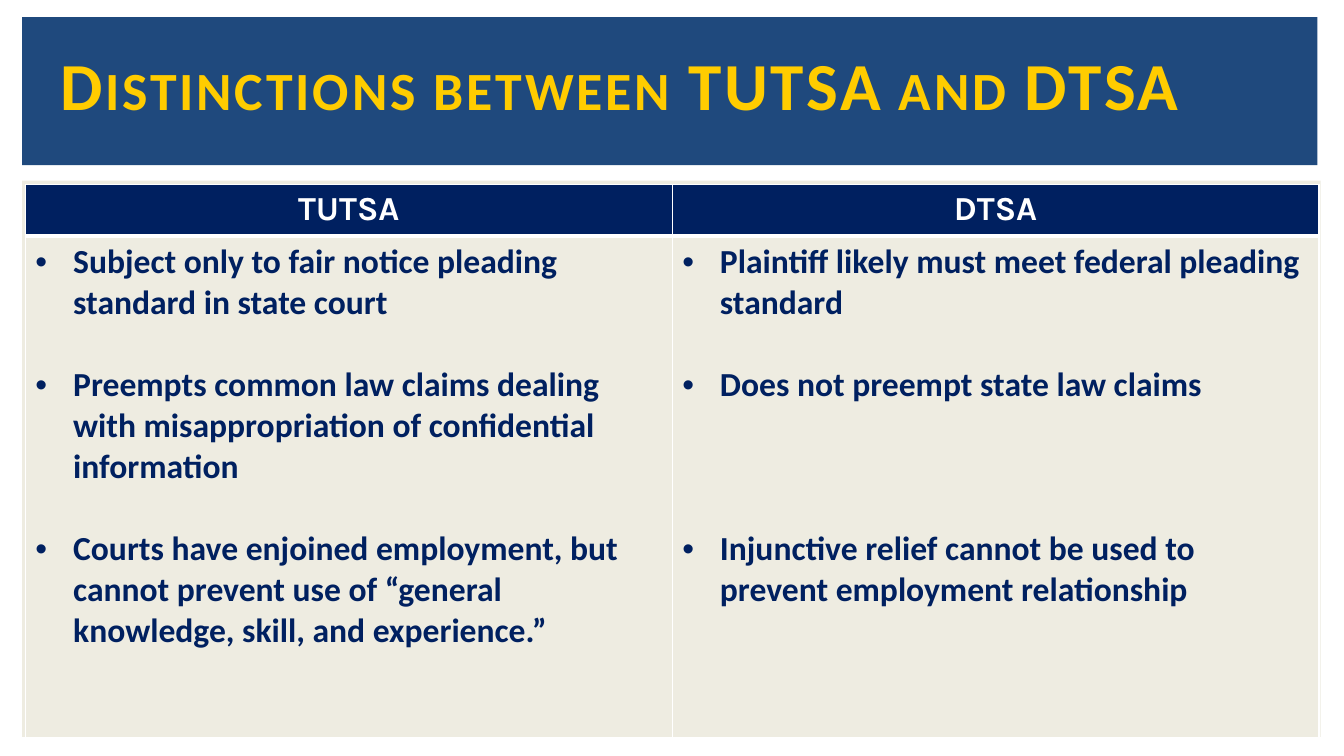
from dataclasses import dataclass

from lxml import etree
from pptx import Presentation
from pptx.dml.color import RGBColor
from pptx.enum.shapes import MSO_SHAPE
from pptx.enum.text import MSO_ANCHOR, MSO_AUTO_SIZE, PP_ALIGN
from pptx.oxml.ns import qn
from pptx.util import Cm, Pt

RECT = MSO_SHAPE.RECTANGLE
MIDDLE = MSO_ANCHOR.MIDDLE
FIXED = MSO_AUTO_SIZE.NONE
CENTER = PP_ALIGN.CENTER


@dataclass(frozen=True)
class Theme:
    navy: str = "002060"
    blue: str = "1F497D"
    gold: str = "FFCC00"
    cream: str = "EEECE1"
    white: str = "FFFFFF"
    main: str = "Calibri"
    head: str = "Karla"
    big: int = 48
    text: int = 24
    line: float = 29.3  # height of one line of body text, in points


class Deck:
    def __init__(self, theme):
        self.theme = theme
        self.file = Presentation()
        self.file.slide_width, self.file.slide_height = Cm(33.87), Cm(19.05)
        self.slide = self.file.slides.add_slide(self.file.slide_layouts[5])

    def style(self, para, font, size, color):
        for run in para.runs:
            run.font.name, run.font.size, run.font.bold = font, Pt(size), True
            run.font.color.rgb = RGBColor.from_string(color)

    def panel(self, box, color):
        shape = self.slide.shapes.add_shape(RECT, *map(Cm, box))
        shape.shadow.inherit = False
        shape.fill.solid()
        shape.fill.fore_color.rgb = RGBColor.from_string(color)
        shape.line.fill.background()

    def title(self, box, text):
        title = self.slide.shapes.title
        title.left, title.top, title.width, title.height = map(Cm, box)
        frame = title.text_frame
        frame.text = text
        frame.word_wrap, frame.auto_size = True, FIXED
        frame.vertical_anchor = MIDDLE
        para = frame.paragraphs[0]
        para.alignment = CENTER
        self.style(para, self.theme.main, self.theme.big, self.theme.gold)
        props = para.runs[0].font._element
        props.set("cap", "small")
        props.set("spc", "200")
        # Bring the title in front of the panels
        self.slide.shapes._spTree.append(title._element)

    def cell(self, cell, color, top, base):
        cell.fill.solid()
        cell.fill.fore_color.rgb = RGBColor.from_string(color)
        props = cell._tc.get_or_add_tcPr()
        sides = (("lnL", 1), ("lnR", 1), ("lnT", top), ("lnB", base))
        for place, (side, width) in enumerate(sides):
            line = etree.Element(qn(f"a:{side}"), w=str(Pt(width)))
            fill = etree.SubElement(line, qn("a:solidFill"))
            etree.SubElement(fill, qn("a:srgbClr"), val=self.theme.white)
            props.insert(place, line)

    def bullet(self, para, gap):
        para.space_before = Pt(gap * self.theme.line)
        props = para._p.get_or_add_pPr()
        props.set("marL", str(Cm(0.95)))
        props.set("indent", str(-Cm(0.95)))
        etree.SubElement(props, qn("a:buFont"), typeface="Arial")
        etree.SubElement(props, qn("a:buChar"), char="•")

    def table(self, box, rows, data):
        theme = self.theme
        table = self.slide.shapes.add_table(
            len(rows), len(data), *map(Cm, box)).table
        for row, height in zip(table.rows, rows):
            row.height = Cm(height)
        for col, (name, points) in enumerate(data):
            # Column heading
            head = table.cell(0, col)
            head.text_frame.text = name
            para = head.text_frame.paragraphs[0]
            para.alignment = CENTER
            self.style(para, theme.head, theme.text, theme.white)
            self.cell(head, theme.navy, 1, 3)
            # Column points, each with a gap counted in lines
            body = table.cell(1, col)
            body.text_frame.text = "\n".join(text for text, gap in points)
            for para, (text, gap) in zip(body.text_frame.paragraphs, points):
                self.bullet(para, gap)
                self.style(para, theme.main, theme.text, theme.navy)
            self.cell(body, theme.cream, 3, 1)


DATA = (
    ("TUTSA", (
        ("Subject only to fair notice pleading standard in state court", 0),
        ("Preempts common law claims dealing with misappropriation of "
         "confidential information", 1),
        ("Courts have enjoined employment, but cannot prevent use of "
         "“general knowledge, skill, and experience.”", 1))),
    ("DTSA", (
        ("Plaintiff likely must meet federal pleading standard", 0),
        ("Does not preempt state law claims", 1),
        ("Injunctive relief cannot be used to prevent employment "
         "relationship", 3))),
)


def main():
    theme = Theme()
    deck = Deck(theme)
    # Backdrop and title band
    deck.panel((0.56, 4.55, 32.72, 14.02), theme.cream)
    deck.panel((0.56, 0.43, 32.64, 3.73), theme.blue)
    deck.title((0.84, 0.66, 32.03, 2.92),
               "Distinctions between TUTSA and DTSA")
    # Comparison
    deck.table((0.64, 4.65, 32.6, 13.94), (1.3, 12.64), DATA)
    deck.file.save("out.pptx")


if __name__ == "__main__":
    main()
